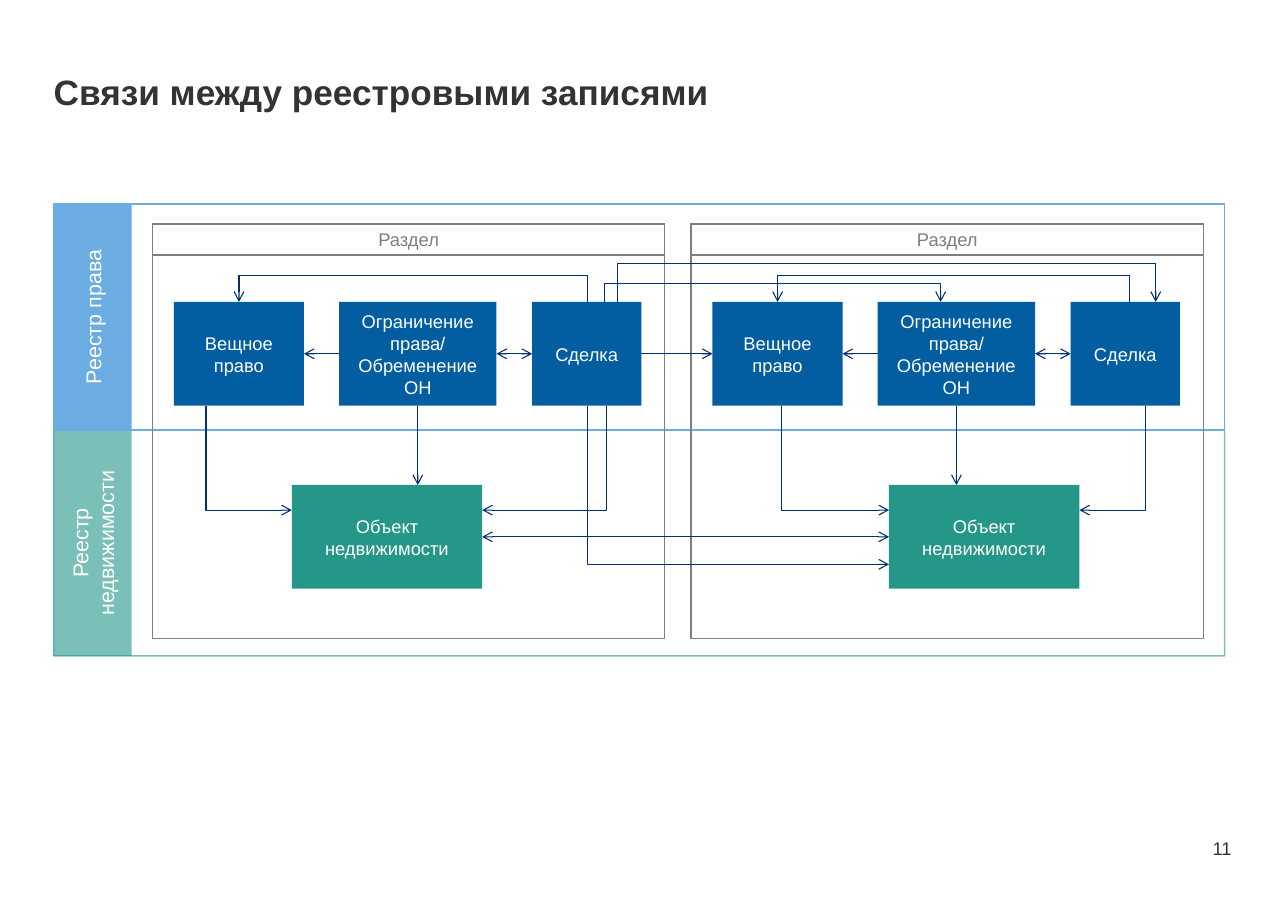
from lxml import etree
from pptx import Presentation
from pptx.dml.color import RGBColor
from pptx.enum.shapes import MSO_CONNECTOR, MSO_SHAPE
from pptx.enum.text import MSO_ANCHOR, PP_ALIGN
from pptx.oxml.ns import qn
from pptx.util import Cm, Pt

RECTANGLE = MSO_SHAPE.RECTANGLE
STRAIGHT, ELBOW = MSO_CONNECTOR.STRAIGHT, MSO_CONNECTOR.ELBOW
MIDDLE, BOTTOM_ANCHOR = MSO_ANCHOR.MIDDLE, MSO_ANCHOR.BOTTOM
LEFT_ALIGN, CENTER, RIGHT_ALIGN = PP_ALIGN.LEFT, PP_ALIGN.CENTER, PP_ALIGN.RIGHT
TOP, LEFT, BOTTOM, RIGHT = range(4)

FONT = "Arial"
DARK = RGBColor(0x33, 0x33, 0x33)
WHITE = RGBColor(0xFF, 0xFF, 0xFF)
GREEN = RGBColor(0x24, 0x97, 0x89)
SKY = RGBColor(0x6B, 0xAD, 0xE3)
BLUE = RGBColor(0x02, 0x5E, 0xA1)
NAVY = RGBColor(0x00, 0x31, 0x74)
GRAY = RGBColor(0x7F, 0x7F, 0x7F)


def style_text(frame, text, size, color, align, bold=False):
    frame.word_wrap = True
    frame.text = text
    for paragraph in frame.paragraphs:
        paragraph.alignment = align
        font = paragraph.font
        font.name, font.size, font.bold = FONT, Pt(size), bold
        font.color.rgb = color


def set_opacity(fill_format, percent):
    color = fill_format.fore_color._xFill.find(qn("a:srgbClr"))
    etree.SubElement(color, qn("a:alpha")).set("val", str(percent * 1000))


def add_box(page, left, top, width, height, fill=None, line=None, opacity=100,
            text="", size=12, color=WHITE):
    box = page.shapes.add_shape(RECTANGLE, left, top, width, height)
    box.shadow.inherit = False
    for area, shade in ((box.fill, fill), (box.line.fill, line)):
        if shade is None:
            area.background()
            continue
        area.solid()
        area.fore_color.rgb = shade
        if opacity < 100:
            set_opacity(area, opacity)
    if line is not None:
        box.line.width = Pt(1)
    if text:
        style_text(box.text_frame, text, size, color, CENTER)
        box.text_frame.vertical_anchor = MIDDLE
    return box


def add_label(page, left, top, width, height, text, size, align, anchor, bold=False):
    box = page.shapes.add_textbox(left, top, width, height)
    frame = box.text_frame
    frame.margin_left = frame.margin_right = frame.margin_top = frame.margin_bottom = 0
    frame.vertical_anchor = anchor
    style_text(frame, text, size, DARK, align, bold)


# Connectors
def style_connector(connector, both_ends=False):
    connector.line.color.rgb = NAVY
    connector.line.width = Pt(0.75)
    properties = connector._element.spPr
    line = properties.find(qn("a:ln"))
    for end in ("a:headEnd", "a:tailEnd") if both_ends else ("a:tailEnd",):
        etree.SubElement(line, qn(end)).set("type", "arrow")
    etree.SubElement(properties, qn("a:effectLst"))


def join(page, start, start_side, end, end_side, both_ends=False):
    connector = page.shapes.add_connector(STRAIGHT, 0, 0, 0, 0)
    connector.begin_connect(start, start_side)
    connector.end_connect(end, end_side)
    style_connector(connector, both_ends)


def add_elbow(page, x1, y1, x2, y2, preset, rotation, flips):
    """Place a quarter-turned elbow, so its length runs down the page."""
    length, breadth = abs(y2 - y1), abs(x2 - x1)
    connector = page.shapes.add_connector(ELBOW, 0, 0, 0, 0)
    connector.left, connector.top = (x1 + x2 - length) // 2, (y1 + y2 - breadth) // 2
    connector.width, connector.height = length, breadth
    properties = connector._element.spPr
    frame = properties.find(qn("a:xfrm"))
    frame.set("rot", str(rotation * 60000))
    for flip in flips:
        frame.set(flip, "1")
    geometry = properties.find(qn("a:prstGeom"))
    geometry.set("prst", preset)
    style_connector(connector)
    return geometry


def go_down_and_aside(page, x1, y1, x2, y2):
    rotation, flips = (270, ["flipH"]) if x2 > x1 else (90, [])
    add_elbow(page, x1, y1, x2, y2, "bentConnector2", rotation, flips)


def go_over(page, x1, x2, top, rise):
    step = Cm(0.03)
    rotation, flips = (90, ["flipH", "flipV"]) if x2 > x1 else (270, ["flipV"])
    geometry = add_elbow(page, x1, top + step, x2, top, "bentConnector3", rotation, flips)
    guide = etree.SubElement(geometry.find(qn("a:avLst")), qn("a:gd"))
    guide.set("name", "adj1")
    guide.set("fmla", f"val {round((rise + step) / step * 100000)}")


# Regions
def add_registry(page, left, top, width, height, text, color, opacity=100):
    add_box(page, left, top, width, height, line=color, opacity=opacity)
    tab = Cm(1.8)
    # The tab is turned about its centre, so its sides are swapped
    label = add_box(page, left + (tab - height) // 2, top + (height - tab) // 2,
                    height, tab, fill=color, opacity=opacity, text=text, size=14)
    label.rotation = 270


def add_section(page, left, top, width, height, object_left, right_exit, deal_exit):
    add_box(page, left, top, width, height, line=GRAY)
    add_box(page, left, top, width, Cm(0.71), line=GRAY, text="Раздел", color=GRAY)

    # Records
    box_height = Cm(2.39)
    right, limit, deal = [
        add_box(page, left + Cm(x), top + Cm(1.79), Cm(box_width), box_height,
                fill=BLUE, text=text)
        for x, box_width, text in (
            (0.49, 3, "Вещное право"),
            (4.3, 3.63, "Ограничение права/\vОбременение ОН"),
            (8.75, 2.52, "Сделка"))]
    estate = add_box(page, left + object_left, top + Cm(6.01), Cm(4.39), box_height,
                     fill=GREEN, text="Объект недвижимости")

    # Links inside the section
    join(page, limit, LEFT, right, RIGHT)
    join(page, limit, RIGHT, deal, LEFT, both_ends=True)
    middle = limit.left + limit.width // 2
    down = page.shapes.add_connector(STRAIGHT, middle, limit.top + box_height,
                                     middle, estate.top)
    down.begin_connect(limit, BOTTOM)
    style_connector(down)
    bottom, entry = deal.top + box_height, estate.top + Cm(0.58)
    go_down_and_aside(page, right.left + right_exit, bottom, estate.left, entry)
    go_down_and_aside(page, deal.left + Cm(1.72), bottom, estate.left + estate.width, entry)
    go_over(page, deal.left + deal_exit, right.left + right.width // 2, deal.top, Cm(0.61))
    return right, limit, deal, estate


def add_cross_links(page, first, second):
    _, _, deal, estate = first
    next_right, next_limit, next_deal, next_estate = second
    join(page, deal, RIGHT, next_right, LEFT)
    join(page, estate, RIGHT, next_estate, LEFT, both_ends=True)
    go_over(page, deal.left + Cm(1.96), next_deal.left + Cm(1.96), deal.top, Cm(0.89))
    go_over(page, deal.left + Cm(1.67), next_limit.left + Cm(1.45), deal.top, Cm(0.43))
    go_down_and_aside(page, deal.left + Cm(1.27), deal.top + deal.height,
                      next_estate.left, next_estate.top + Cm(1.83))


def add_diagram(page, left, top, width, height):
    half = height // 2
    add_registry(page, left, top + half, width, half, "Реестр\nнедвижимости", GREEN, 60)
    add_registry(page, left, top, width, half, "Реестр права", SKY)
    sections = [
        add_section(page, left + Cm(2.28) + index * Cm(12.42), top + Cm(0.47),
                    Cm(11.81), Cm(9.55), Cm(object_left), Cm(right_exit), Cm(deal_exit))
        for index, (object_left, right_exit, deal_exit) in enumerate(
            ((3.21, 0.74, 1.28), (4.56, 1.6, 1.36)))]
    add_cross_links(page, *sections)


def main():
    deck = Presentation()
    deck.slide_width, deck.slide_height = Cm(29.7), Cm(21)
    page = deck.slides.add_slide(deck.slide_layouts[6])
    add_label(page, Cm(1.24), Cm(1.4), Cm(21.1), Cm(1.4),
              "Связи между реестровыми записями", 23, LEFT_ALIGN, MIDDLE, bold=True)
    add_diagram(page, Cm(1.24), Cm(4.7), Cm(27), Cm(10.42))
    add_label(page, Cm(27.13), Cm(19.2), Cm(1.27), Cm(0.61), "11", 12,
              RIGHT_ALIGN, BOTTOM_ANCHOR)
    deck.save("out.pptx")


if __name__ == "__main__":
    main()
